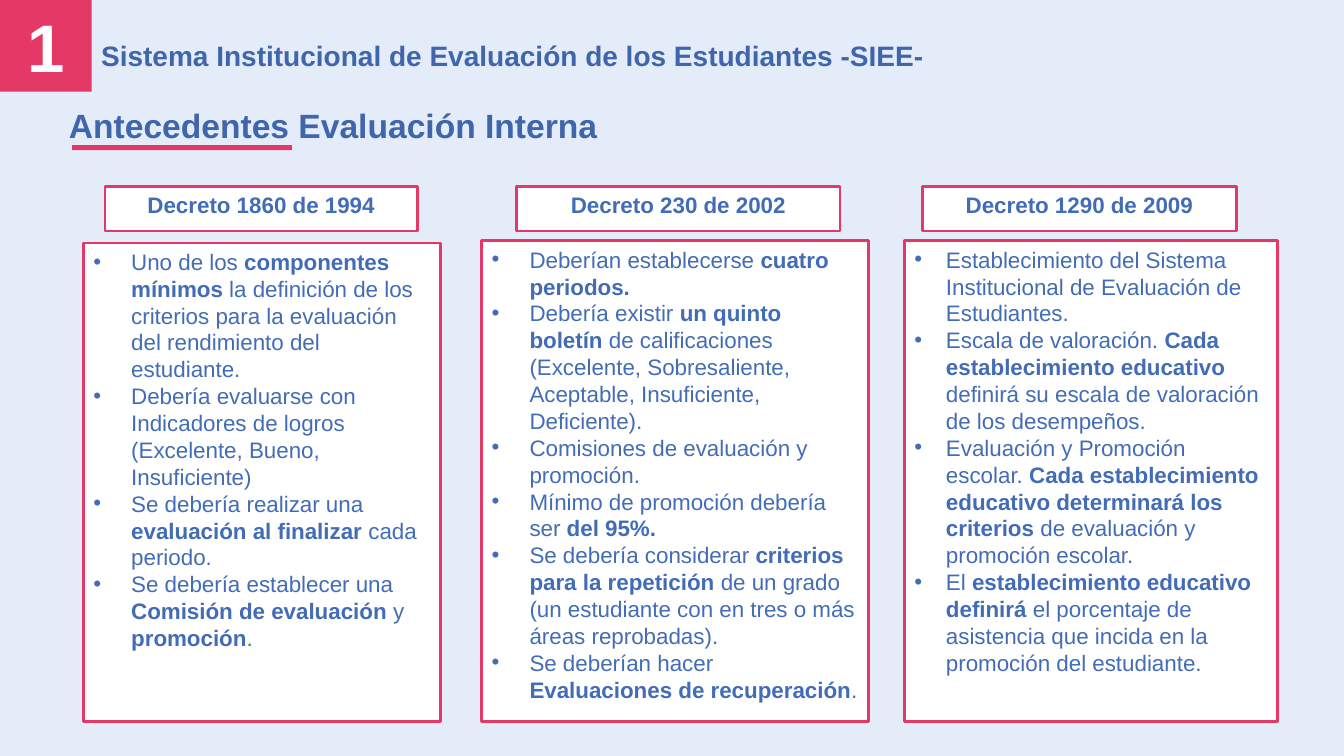
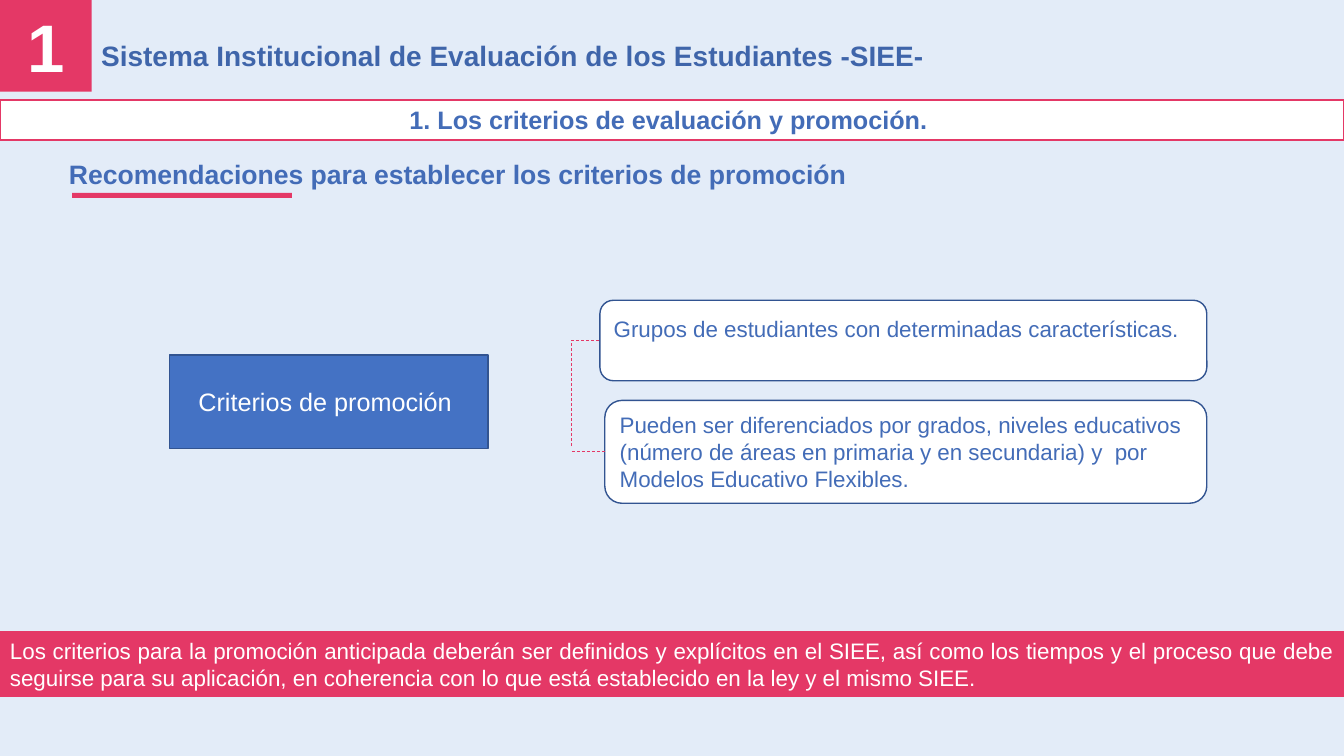
import pptx
import pptx.util
import pptx.dml.color
import pptx.enum.dml
import pptx.enum.shapes
import pptx.enum.text
import pptx.oxml.ns
import lxml.etree

Pt = pptx.util.Pt
SHAPE = pptx.enum.shapes.MSO_SHAPE
LINK = pptx.enum.shapes.MSO_CONNECTOR
ALIGN = pptx.enum.text.PP_ALIGN
ANCHOR = pptx.enum.text.MSO_ANCHOR

COLORS = {
    "background": "E3ECF8", "accent": "E43866", "title": "3F65AA",
    "text": "436CB7", "white": "FFFFFF", "blue": "4472C4", "outline": "325491",
}
FONT = "Arial"
SLIDE_W, SLIDE_H = 960, 540

# Content: text between ** marks is bold
SECTION = "1"
HEADER = "Sistema Institucional de Evaluación de los Estudiantes -SIEE-"
BACKGROUND_HEADING = "Antecedentes Evaluación Interna"
LIST_BOTTOM = 515.5
DECREES = [
    {"name": "Decreto 1860 de 1994", "name_x": 75, "name_w": 223,
     "x": 59.5, "top": 173.5, "w": 255, "indent": 27, "points": [
         "Uno de los **componentes mínimos** la definición de los criterios "
         "para la evaluación del rendimiento del estudiante.",
         "Debería evaluarse con Indicadores de logros (Excelente, Bueno, Insuficiente)",
         "Se debería realizar una **evaluación al finalizar **cada periodo.",
         "Se debería establecer una **Comisión de evaluación **y **promoción**."]},
    {"name": "Decreto 230 de 2002", "name_x": 369, "name_w": 231,
     "x": 344, "top": 172, "w": 276.5, "indent": 27, "points": [
         "Deberían establecerse **cuatro periodos.**",
         "Debería existir **un quinto boletín **de calificaciones (Excelente, "
         "Sobresaliente, Aceptable, Insuficiente, Deficiente).",
         "Comisiones de evaluación y promoción.",
         "Mínimo de promoción debería ser** del 95%.**",
         "Se debería considerar **criterios para la repetición **de un grado "
         "(un estudiante con en tres o más áreas reprobadas).",
         "Se deberían hacer **Evaluaciones de recuperación**."]},
    {"name": "Decreto 1290 de 2009", "name_x": 659, "name_w": 224,
     "x": 646, "top": 172, "w": 266.5, "indent": 22.5, "points": [
         "Establecimiento del Sistema Institucional de Evaluación de Estudiantes.",
         "Escala de valoración. **Cada establecimiento educativo **definirá su "
         "escala de valoración de los desempeños.",
         "Evaluación y Promoción escolar. **Cada establecimiento educativo "
         "determinará los criterios **de evaluación y promoción escolar.",
         "El **establecimiento educativo definirá **el porcentaje de asistencia "
         "que incida en la promoción del estudiante."]},
]
TOPIC = "1. Los criterios de evaluación y promoción. "
ADVICE_HEADING = "Recomendaciones para establecer los criterios de promoción"
CRITERIA = "Criterios de promoción "
GROUPS = "Grupos de estudiantes con determinadas características."
LEVELS = ("Pueden ser diferenciados por grados, niveles educativos (número de áreas "
          "en primaria y en secundaria) y  por Modelos Educativo Flexibles.")
CONCLUSION = ("Los criterios para la promoción anticipada deberán ser definidos y "
              "explícitos en el SIEE, así como los tiempos y el proceso que debe "
              "seguirse para su aplicación, en coherencia con lo que está "
              "establecido en la ley y el mismo SIEE.")


def rgb(name):
    return pptx.dml.color.RGBColor.from_string(COLORS[name])


def set_bullet(paragraph, indent):
    """Hanging bullet, or no bullet when indent is 0."""
    props = paragraph._p.get_or_add_pPr()
    props.set("marL", str(Pt(indent)))
    props.set("indent", str(-Pt(indent)))
    if indent:
        tags = [("a:buFont", {"typeface": FONT}), ("a:buChar", {"char": "•"})]
    else:
        tags = [("a:buNone", {})]
    for tag, attributes in tags:
        lxml.etree.SubElement(props, pptx.oxml.ns.qn(tag), attributes)


def write(shape, lines, size=16, color="text", bold=False, align=ALIGN.LEFT,
          anchor=ANCHOR.TOP, indent=0, inset_top=3.6):
    frame = shape.text_frame
    frame.word_wrap = True
    frame.auto_size = pptx.enum.text.MSO_AUTO_SIZE.NONE
    frame.vertical_anchor = anchor
    frame.margin_left = frame.margin_right = Pt(7.2)
    frame.margin_top, frame.margin_bottom = Pt(inset_top), Pt(3.6)
    for i, line in enumerate(lines):
        paragraph = frame.add_paragraph() if i else frame.paragraphs[0]
        paragraph.alignment = align
        paragraph.space_before = paragraph.space_after = Pt(0)
        paragraph.line_spacing = 1.0
        set_bullet(paragraph, indent)
        for j, part in enumerate(line.split("**")):
            if part:
                run = paragraph.add_run()
                run.text = part
                run.font.name, run.font.size = FONT, Pt(size)
                run.font.bold = bold or j % 2 == 1
                run.font.color.rgb = rgb(color)


def paint(shape, fill, line=None, width=1):
    shape.fill.solid()
    shape.fill.fore_color.rgb = rgb(fill)
    if line:
        shape.line.color.rgb = rgb(line)
        shape.line.width = Pt(width)
    else:
        shape.line.fill.background()


def add_box(slide, x, y, w, h, fill, line=None, width=1, kind=SHAPE.RECTANGLE):
    box = slide.shapes.add_shape(kind, Pt(x), Pt(y), Pt(w), Pt(h))
    box.shadow.inherit = False
    paint(box, fill, line, width)
    return box


def place(shape, x, y, w, h):
    shape.left, shape.top, shape.width, shape.height = Pt(x), Pt(y), Pt(w), Pt(h)
    return shape


def add_dashed(slide, kind, x1, y1, x2, y2):
    link = slide.shapes.add_connector(kind, Pt(x1), Pt(y1), Pt(x2), Pt(y2))
    link.line.color.rgb = rgb("accent")
    link.line.width = Pt(0.5)
    link.line.dash_style = pptx.enum.dml.MSO_LINE.DASH
    lxml.etree.SubElement(link._element.spPr, pptx.oxml.ns.qn("a:effectLst"))
    return link


def start_slide(prs, layout):
    """Slide with the shared section number and header."""
    slide = prs.slides.add_slide(prs.slide_layouts[layout])
    header = place(slide.shapes.title, 65, 24, 885, 31.5)
    write(header, [HEADER], size=20, color="title", bold=True)
    badge = add_box(slide, 0, 0, 65.5, 65.5, "accent")
    write(badge, [SECTION], size=48, color="white", bold=True,
          align=ALIGN.CENTER, anchor=ANCHOR.MIDDLE)
    return slide


def add_heading(slide, holder, text, y, h, bar_y, **style):
    write(place(holder, 42, y, 577, h), [text], bold=True, **style)
    add_box(slide, 51.5, bar_y, 157, 3.6, "accent")


def build_background(prs):
    slide = start_slide(prs, 4)
    heading, *lists = [p for p in slide.placeholders if p.placeholder_format.idx > 0]
    add_heading(slide, heading, BACKGROUND_HEADING, 71.5, 36, 103.7,
                size=24, color="title")
    for decree, points in zip(DECREES, lists):
        name = add_box(slide, decree["name_x"], 133, decree["name_w"], 32,
                       "white", "accent", 2)
        write(name, [decree["name"]], bold=True, align=ALIGN.CENTER)
        place(points, decree["x"], decree["top"], decree["w"],
              LIST_BOTTOM - decree["top"])
        paint(points, "white", "accent", 2)
        write(points, decree["points"], indent=decree["indent"])


def build_criteria(prs):
    slide = start_slide(prs, 1)
    topic = add_box(slide, 0, 71.3, SLIDE_W, 29, "white", "accent", 1.5)
    write(topic, [TOPIC], size=18, bold=True, align=ALIGN.CENTER)
    add_heading(slide, slide.placeholders[1], ADVICE_HEADING, 109.5, 30, 137.7, size=19)

    # Criteria and their two conditions
    criteria = add_box(slide, 121, 253.5, 227.5, 67, "blue", "outline")
    write(criteria, [CRITERIA], size=18, color="white",
          align=ALIGN.CENTER, anchor=ANCHOR.MIDDLE)
    groups = add_box(slide, 428.5, 214.5, 433.5, 57.5, "white", "outline",
                     kind=SHAPE.ROUNDED_RECTANGLE)
    write(groups, [GROUPS], inset_top=7.6)
    levels = add_box(slide, 432, 286, 430, 73.5, "white", "outline",
                     kind=SHAPE.ROUNDED_RECTANGLE)
    write(levels, [LEVELS], anchor=ANCHOR.MIDDLE)

    # Bracket: a quarter-turned elbow up to the groups, a line to the levels
    elbow = add_dashed(slide, LINK.ELBOW, 456.25, 291, 380.75, 271)
    elbow._element.spPr.find(pptx.oxml.ns.qn("a:prstGeom")).set("prst", "bentConnector2")
    elbow._element.spPr.find(pptx.oxml.ns.qn("a:xfrm")).set("rot", "5400000")
    branch = add_dashed(slide, LINK.STRAIGHT, 408.5, 322.75, 432, 322.75)
    branch.end_connect(levels, 1)

    conclusion = add_box(slide, 0, 451.3, SLIDE_W, 46, "accent", "accent", 1.5)
    write(conclusion, [CONCLUSION], color="white", align=ALIGN.JUSTIFY)


def main():
    prs = pptx.Presentation()
    prs.slide_width, prs.slide_height = Pt(SLIDE_W), Pt(SLIDE_H)
    backdrop = prs.slide_master.background.fill
    backdrop.solid()
    backdrop.fore_color.rgb = rgb("background")
    build_background(prs)
    build_criteria(prs)
    prs.save("out.pptx")


if __name__ == "__main__":
    main()
